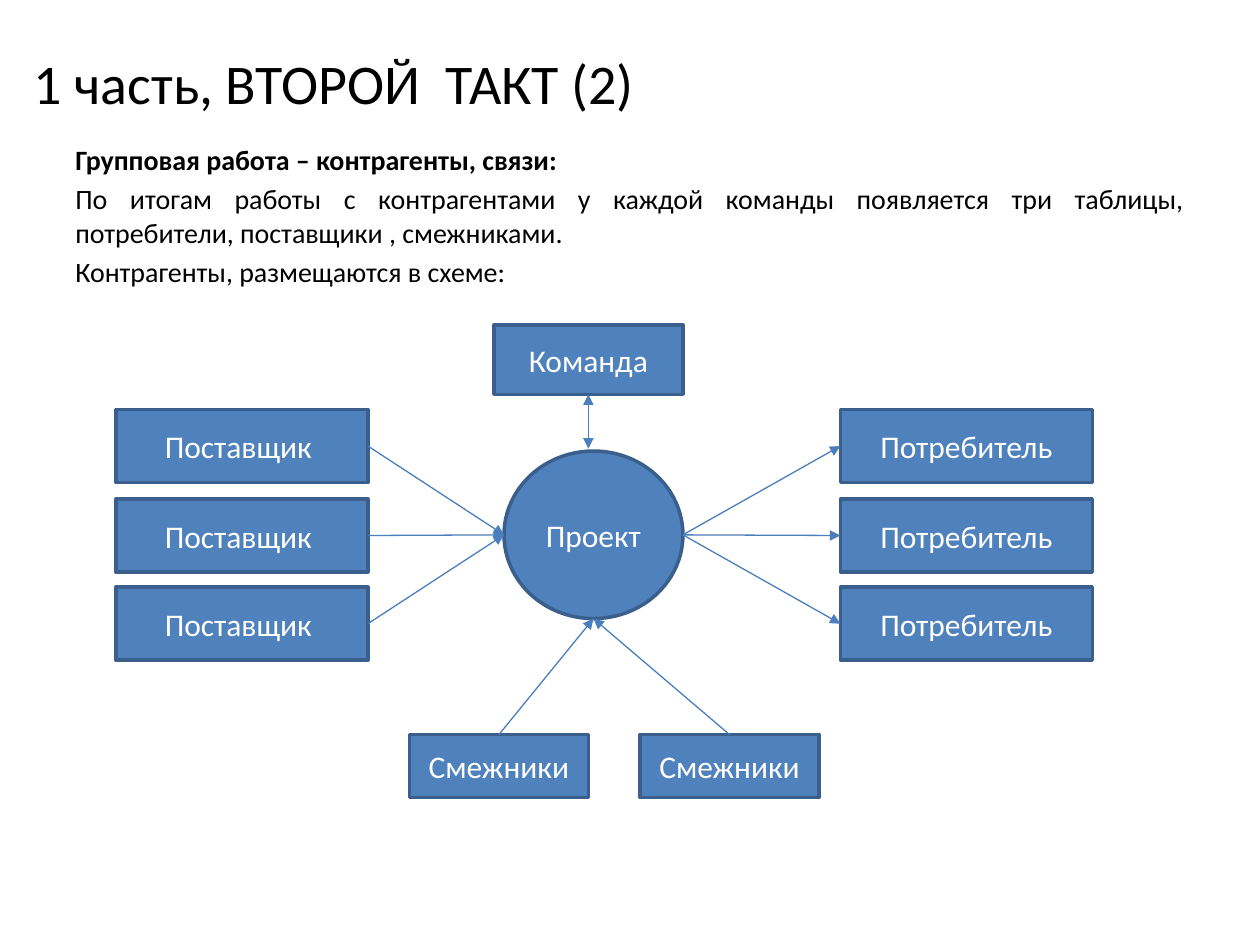
from dataclasses import dataclass

import pptx
import pptx.dml.color
import pptx.enum.shapes
import pptx.enum.text
import pptx.oxml
import pptx.oxml.ns
import pptx.util

Inches = pptx.util.Inches
Pt = pptx.util.Pt
KIND = pptx.enum.shapes.MSO_SHAPE
ALIGN = pptx.enum.text.PP_ALIGN
ANCHOR = pptx.enum.text.MSO_ANCHOR

FONT = "Calibri"
COLORS = {"text": "000000", "label": "FFFFFF", "fill": "4F81BD",
          "edge": "3A5F8C", "link": "4B7EBC"}
TOP, LEFT, BOTTOM, RIGHT = range(4)


@dataclass
class Node:
    label: str
    left: float
    top: float
    width: float
    height: float
    kind: int = KIND.RECTANGLE

    def side(self, site: int) -> tuple[float, float]:
        """Middle of one side, in inches."""
        dx, dy = ((0.5, 0), (0, 0.5), (0.5, 1), (1, 0.5))[site]
        return self.left + dx * self.width, self.top + dy * self.height


def color(name: str) -> pptx.dml.color.RGBColor:
    return pptx.dml.color.RGBColor.from_string(COLORS[name])


def style(par, size: float, hue: str, align, bold: bool = False) -> None:
    par.alignment = align
    par.font.name = FONT
    par.font.size = Pt(size)
    par.font.bold = bold
    par.font.color.rgb = color(hue)


def add_text(slide, box: tuple, lines: list[str], size: float, anchor, align):
    frame = slide.shapes.add_textbox(*map(Inches, box)).text_frame
    frame.word_wrap = True
    frame.vertical_anchor = anchor
    frame.text = "\n".join(lines)
    for par in frame.paragraphs:
        style(par, size, "text", align)
    return frame.paragraphs


def add_node(slide, node: Node):
    shape = slide.shapes.add_shape(
        node.kind, Inches(node.left), Inches(node.top),
        Inches(node.width), Inches(node.height))
    shape.shadow.inherit = False
    shape.fill.solid()
    shape.fill.fore_color.rgb = color("fill")
    shape.line.color.rgb = color("edge")
    shape.line.width = Pt(2)
    frame = shape.text_frame
    frame.text = node.label
    frame.vertical_anchor = ANCHOR.MIDDLE
    style(frame.paragraphs[0], 18, "label", ALIGN.CENTER)
    return shape


def add_link(slide, start: tuple, end: tuple, heads: tuple = ("tailEnd",)):
    link = slide.shapes.add_connector(
        pptx.enum.shapes.MSO_CONNECTOR.STRAIGHT, *map(Inches, start + end))
    link.line.color.rgb = color("link")
    link.line.width = Pt(0.75)
    line = link.line._get_or_add_ln()
    spaces = pptx.oxml.ns.nsdecls("a")
    for head in heads:
        line.append(pptx.oxml.parse_xml(f'<a:{head} {spaces} type="triangle"/>'))
    line.addnext(pptx.oxml.parse_xml(f"<a:effectLst {spaces}/>"))
    return link


def main() -> None:
    deck = pptx.Presentation()
    deck.slide_width, deck.slide_height = Inches(10), Inches(7.5)
    slide = deck.slides.add_slide(deck.slide_layouts[6])

    # Title and task
    add_text(slide, (0.17, 0.3, 9.67, 0.7), ["1 часть, ВТОРОЙ  ТАКТ (2)"],
             32, ANCHOR.MIDDLE, ALIGN.LEFT)
    task = add_text(slide, (0.5, 1.08, 9, 5.62), [
        "Групповая работа – контрагенты, связи:",
        "По итогам работы с контрагентами у каждой команды появляется "
        "три таблицы, потребители, поставщики , смежниками.",
        "Контрагенты, размещаются в схеме:",
    ], 16, ANCHOR.TOP, ALIGN.JUSTIFY)
    task[0].font.bold = True
    for par in task:
        par.space_before = Pt(3.2)

    # Project in the centre
    hub = Node("Проект", 4, 3.58, 1.42, 1.33, KIND.OVAL)
    add_node(slide, hub)

    # Suppliers on the left, consumers on the right
    for top in (3.25, 3.96, 4.66):
        node = Node("Поставщик ", 0.92, top, 2, 0.58)
        shape = add_node(slide, node)
        link = add_link(slide, node.side(RIGHT), hub.side(LEFT))
        link.begin_connect(shape, RIGHT)

        node = Node("Потребитель", 6.67, top, 2, 0.58)
        shape = add_node(slide, node)
        link = add_link(slide, hub.side(RIGHT), node.side(LEFT))
        link.end_connect(shape, LEFT)

    # Partners below
    for left in (3.25, 5.08):
        node = Node("Смежники", left, 5.83, 1.42, 0.5)
        shape = add_node(slide, node)
        link = add_link(slide, node.side(TOP), hub.side(BOTTOM))
        link.begin_connect(shape, TOP)

    # Team above, with a two-way arrow
    team = Node("Команда", 3.92, 2.58, 1.5, 0.55)
    shape = add_node(slide, team)
    link = add_link(slide, team.side(BOTTOM), (4.67, 3.56),
                    ("headEnd", "tailEnd"))
    link.begin_connect(shape, BOTTOM)

    deck.save("out.pptx")


if __name__ == "__main__":
    main()
